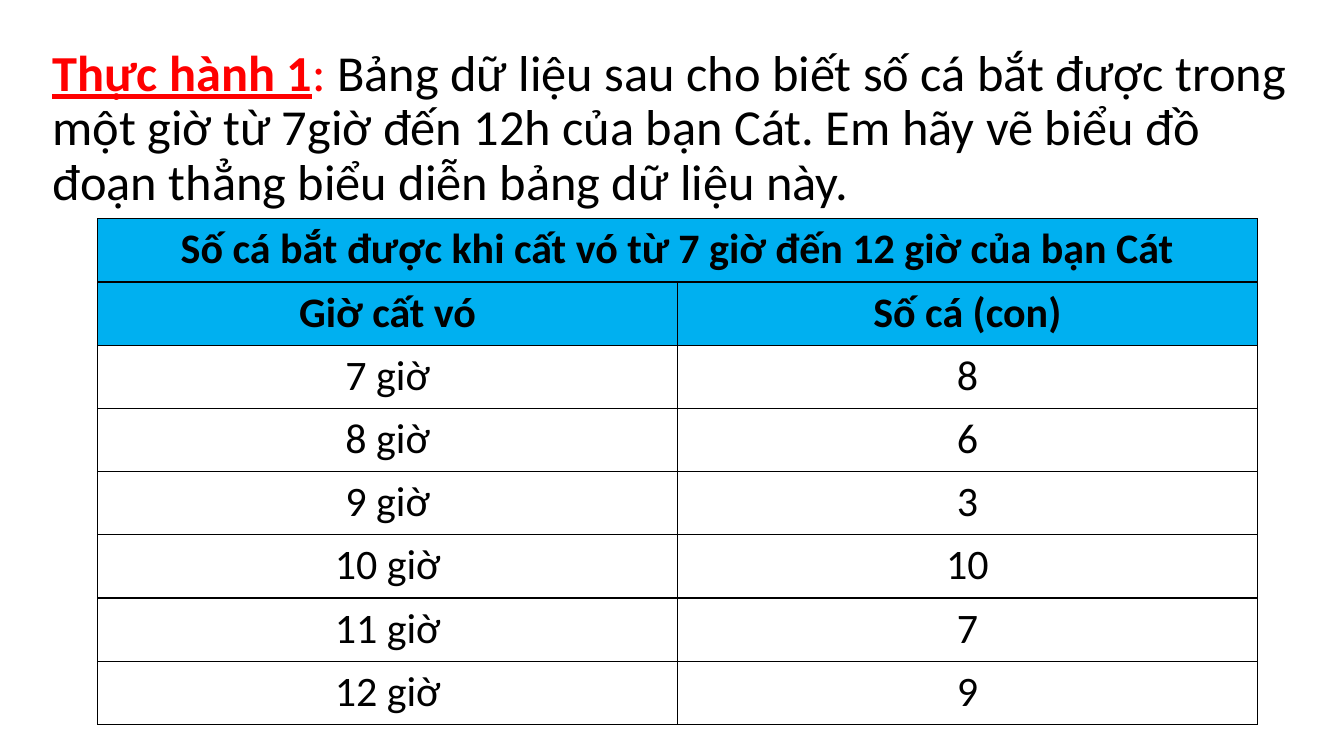
from dataclasses import dataclass

from lxml import etree
from pptx import Presentation
from pptx import util as u
from pptx.dml.color import RGBColor
from pptx.enum import text
from pptx.oxml import ns


@dataclass
class Theme:
    font: str = "Calibri"
    ink: str = "000000"
    accent: str = "FF0000"
    header: str = "00B0F0"
    title: int = 36
    cell: int = 30
    border: float = 1


def write(para, words, theme, size, color=None, bold=False, line=False):
    """Append one formatted run to a paragraph."""
    run = para.add_run()
    run.text = words
    font = run.font
    font.name, font.size = theme.font, u.Pt(size)
    font.bold, font.underline = bold, line
    font.color.rgb = RGBColor.from_string(color or theme.ink)


class Deck:
    def __init__(self, theme):
        self.theme = theme
        self.prs = Presentation()
        self.prs.slide_width = u.Inches(13.33)
        self.prs.slide_height = u.Inches(7.5)
        self.slide = self.prs.slides.add_slide(self.prs.slide_layouts[5])

    def title(self, box, runs):
        """Fill the title from pairs of words and format."""
        shape = self.slide.shapes.title
        shape.left, shape.top, shape.width, shape.height = map(u.Inches, box)
        frame = shape.text_frame
        frame.word_wrap = True
        frame.auto_size = text.MSO_AUTO_SIZE.NONE
        frame.vertical_anchor = text.MSO_ANCHOR.MIDDLE
        para = frame.paragraphs[0]
        para.alignment = text.PP_ALIGN.LEFT
        para.line_spacing = 0.9
        for words, style in runs:
            write(para, words, self.theme, self.theme.title, **style)

    def table(self, box, rows, heads):
        """Draw a table whose first rows, heads in number, are headers."""
        frame = self.slide.shapes.add_table(
            len(rows), len(rows[-1]), *map(u.Inches, box))
        grid = frame.table
        for r, row in enumerate(rows):
            for c in range(len(grid.columns)):
                self.edge(grid.cell(r, c))
                self.shade(grid.cell(r, c), r < heads)
            for c, words in enumerate(row):
                para = grid.cell(r, c).text_frame.paragraphs[0]
                para.alignment = text.PP_ALIGN.CENTER
                write(para, words, self.theme, self.theme.cell, bold=r < heads)
            if len(row) == 1:
                grid.cell(r, 0).merge(grid.cell(r, len(grid.columns) - 1))

    def shade(self, cell, head):
        if head:
            cell.fill.solid()
            cell.fill.fore_color.rgb = RGBColor.from_string(self.theme.header)
        else:
            cell.fill.background()

    def edge(self, cell):
        """Give a cell four borders; call it before the fill is set."""
        props = cell._tc.get_or_add_tcPr()
        for side in ("lnL", "lnR", "lnT", "lnB"):
            line = etree.SubElement(props, ns.qn("a:" + side),
                                    w=str(u.Pt(self.theme.border)))
            fill = etree.SubElement(line, ns.qn("a:solidFill"))
            etree.SubElement(fill, ns.qn("a:srgbClr"), val=self.theme.ink)


def main():
    theme = Theme()
    deck = Deck(theme)
    deck.title((0.42, 0.4, 12.6, 1.77), [
        ("Thực hành 1", dict(color=theme.accent, bold=True, line=True)),
        (": ", dict(color=theme.accent)),
        ("Bảng dữ liệu sau cho biết số cá bắt được trong một giờ từ 7giờ "
         "đến 12h của bạn Cát. Em hãy vẽ biểu đồ đoạn thẳng biểu diễn "
         "bảng dữ liệu này.", {}),
    ])
    catch = [8, 6, 3, 10, 7, 9]
    rows = [["Số cá bắt được khi cất vó từ 7 giờ đến 12 giờ của bạn Cát"],
            ["Giờ cất vó", "Số cá (con)"]]
    rows += [[f"{hour} giờ", str(fish)] for hour, fish in enumerate(catch, 7)]
    deck.table((0.97, 2.17, 11.5, 5.02), rows, heads=2)
    deck.prs.save("out.pptx")


if __name__ == "__main__":
    main()
